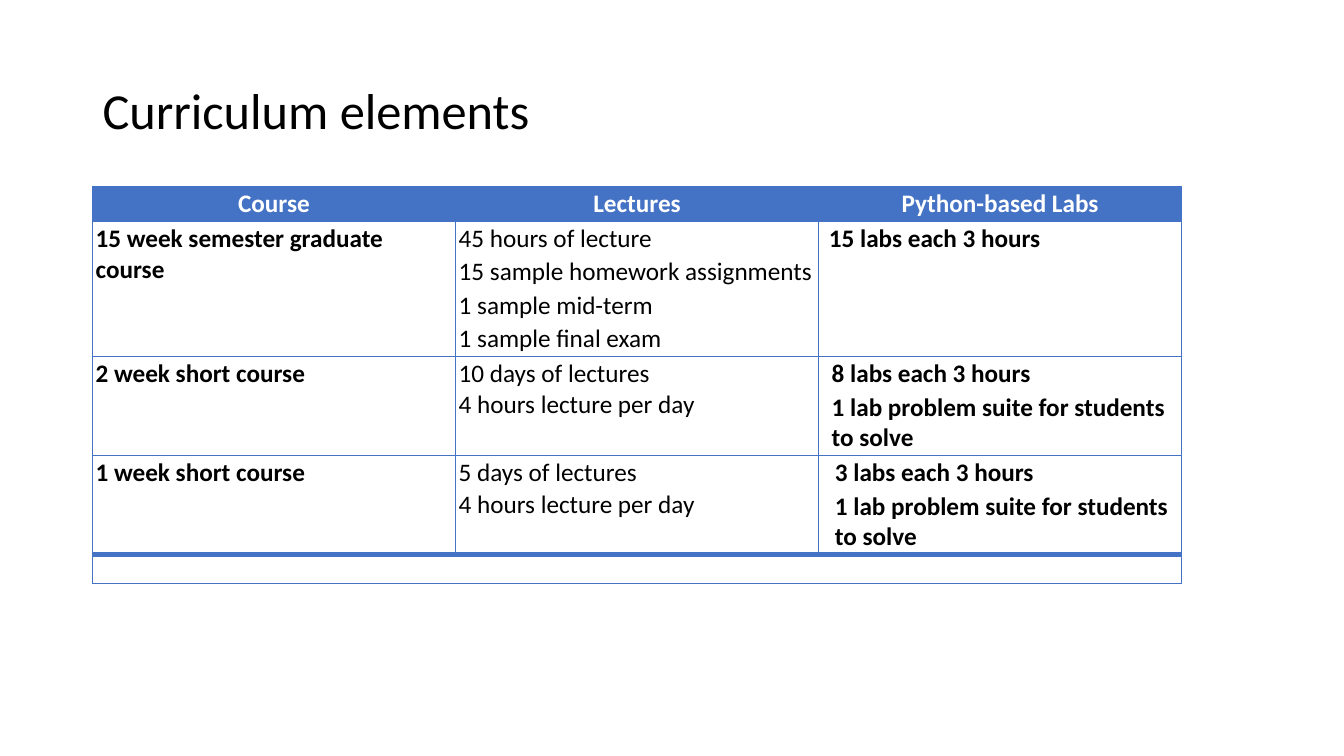
from lxml.etree import SubElement
from pptx import Presentation
from pptx.dml.color import RGBColor
from pptx.enum.text import MSO_ANCHOR as Anchor, MSO_AUTO_SIZE as AutoSize, PP_ALIGN as Align
from pptx.oxml.ns import qn
from pptx.util import Cm, Pt

BLUE, BLACK, WHITE = "4472C4", "000000", "FFFFFF"
HEADERS = ["Course", "Lectures", "Python-based Labs"]
COURSES = [
    {
        "course": "15 week semester graduate course",
        "lectures": ["45 hours of lecture", "15 sample homework assignments",
                     "1 sample mid-term", "1 sample final exam"],
        "lecture_gaps": [1, 1, 1, 1],
        "labs": ["15 labs each 3 hours"],
        "lab_indent": 0.18,
    },
    {
        "course": "2 week short course",
        "lectures": ["10 days of lectures", "4 hours lecture per day"],
        "lecture_gaps": [0, 0],
        "labs": ["8 labs each 3 hours", "1 lab problem suite for students to solve"],
        "lab_indent": 0.25,
    },
    {
        "course": "1 week short course",
        "lectures": ["5 days of lectures", "4 hours lecture per day"],
        "lecture_gaps": [0, 1],
        "labs": ["3 labs each 3 hours", "1 lab problem suite for students to solve"],
        "lab_indent": 0.33,
    },
]
ROW_HEIGHTS = [0.8, 3.1, 2.26, 2.26, 0.72]


def color(value):
    return RGBColor.from_string(value)


def write(paragraph, text, size=18, fill=BLACK, bold=False, align=Align.LEFT,
          gap=0, indent=0, line_spacing=1.0):
    paragraph.alignment = align
    paragraph.line_spacing = line_spacing
    paragraph.space_before = paragraph.space_after = Pt(gap)
    if indent:
        properties = paragraph._p.get_or_add_pPr()
        properties.set("marL", str(Cm(indent)))
        properties.set("indent", "0")
    run = paragraph.add_run()
    run.text = text
    run.font.name = "Calibri"
    run.font.size = Pt(size)
    run.font.bold = bold
    run.font.color.rgb = color(fill)


def write_lines(cell, lines, gaps, **formatting):
    frame = cell.text_frame
    for index, (line, gap) in enumerate(zip(lines, gaps)):
        paragraph = frame.add_paragraph() if index else frame.paragraphs[0]
        write(paragraph, line, gap=gap, **formatting)


def set_borders(cell, **widths):
    properties = cell._tc.get_or_add_tcPr()
    for side in "LRTB":
        line = SubElement(properties, qn(f"a:ln{side}"), w=str(Pt(widths.get(side, 0.5))))
        solid = SubElement(line, qn("a:solidFill"))
        SubElement(solid, qn("a:srgbClr"), val=BLUE)


def format_cell(cell, fill=None, anchor=Anchor.TOP, **border_widths):
    cell.margin_left = cell.margin_right = Cm(0.08)
    cell.margin_top = cell.margin_bottom = Cm(0.05)
    cell.vertical_anchor = anchor
    set_borders(cell, **border_widths)
    if fill:
        cell.fill.solid()
        cell.fill.fore_color.rgb = color(fill)
    else:
        cell.fill.background()


def place_title(slide, text, left, top, width, height):
    title = slide.shapes.title
    title.left, title.top, title.width, title.height = map(Cm, (left, top, width, height))
    frame = title.text_frame
    frame.word_wrap = True
    frame.auto_size = AutoSize.NONE
    frame.vertical_anchor = Anchor.MIDDLE
    write(frame.paragraphs[0], text, size=36, line_spacing=0.9)


def place_curriculum(slide, left, top, width):
    frame = slide.shapes.add_table(len(ROW_HEIGHTS), len(HEADERS), Cm(left), Cm(top),
                                   Cm(width), Cm(sum(ROW_HEIGHTS)))
    table = frame.table
    table.first_row = table.horz_banding = False
    for row, height in zip(table.rows, ROW_HEIGHTS):
        row.height = Cm(height)

    for column, header in enumerate(HEADERS):
        cell = table.cell(0, column)
        format_cell(cell, fill=BLUE, anchor=Anchor.MIDDLE)
        write_lines(cell, [header], [0], fill=WHITE, bold=True, align=Align.CENTER)

    for row, entry in enumerate(COURSES, start=1):
        bottom = 4 if row == len(COURSES) else 0.5
        course, lectures, labs = table.rows[row].cells
        for cell in (course, lectures, labs):
            format_cell(cell, B=bottom)
        write_lines(course, [entry["course"]], [1], bold=True)
        write_lines(lectures, entry["lectures"], entry["lecture_gaps"])
        write_lines(labs, entry["labs"], [1] * len(entry["labs"]), bold=True,
                    indent=entry["lab_indent"])

    footer = list(table.rows[len(ROW_HEIGHTS) - 1].cells)
    for cell in footer:
        format_cell(cell, T=4)
        SubElement(cell.text_frame.paragraphs[0]._p, qn("a:endParaRPr"), sz="1200")
    footer[0].merge(footer[-1])


def main():
    presentation = Presentation()
    presentation.slide_width, presentation.slide_height = Cm(33.87), Cm(19.05)
    slide = presentation.slides.add_slide(presentation.slide_layouts[5])
    place_title(slide, "Curriculum elements", 2.33, 1.01, 29.21, 3.68)
    place_curriculum(slide, 2.33, 4.7, 27.45)
    presentation.save("out.pptx")


if __name__ == "__main__":
    main()
